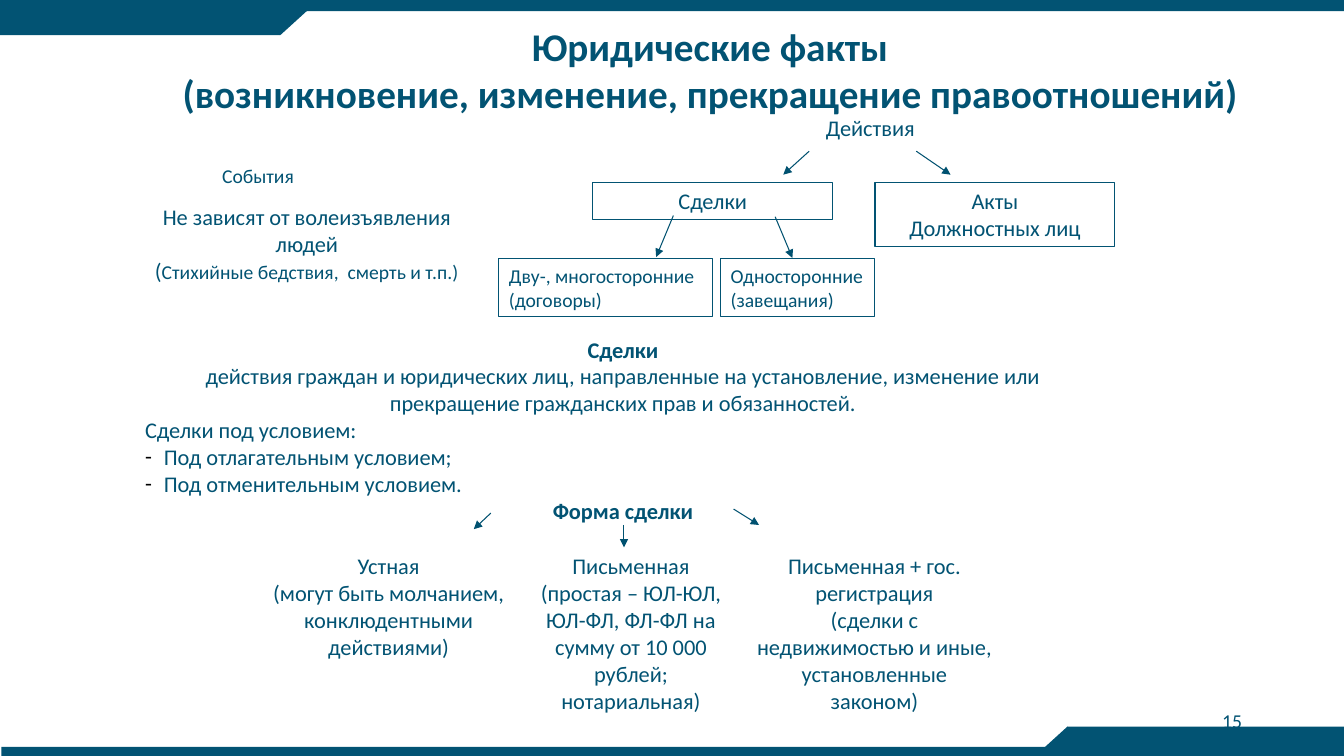
"""Build the slide on legal facts: events, actions, transactions and their forms."""
from lxml import etree
from pptx import Presentation
from pptx.dml import color
from pptx.enum import shapes, text
from pptx.oxml import ns
from pptx import util as u

BLUE, LINE = "025373", "005170"
LEFT, CENTER, RIGHT = text.PP_ALIGN.LEFT, text.PP_ALIGN.CENTER, text.PP_ALIGN.RIGHT
TOP, MIDDLE = text.MSO_ANCHOR.TOP, text.MSO_ANCHOR.MIDDLE


def paint(fill, value):
    fill.solid()
    fill.fore_color.rgb = color.RGBColor.from_string(value)


def write(box, lines, size=16, align=CENTER, anchor=TOP, bold=False):
    frame = box.text_frame
    layout = {"word_wrap": True, "vertical_anchor": anchor,
              "margin_left": u.Pt(7.2), "margin_right": u.Pt(7.2),
              "margin_top": u.Pt(3.6), "margin_bottom": u.Pt(3.6)}
    for name, value in layout.items():
        setattr(frame, name, value)
    for index, line in enumerate(lines):
        para = frame.paragraphs[0] if index == 0 else frame.add_paragraph()
        para.alignment = align
        for words, changes in [(line, {})] if isinstance(line, str) else line:
            span = para.add_run()
            span.text = words
            look = {"name": "Calibri", "size": u.Pt(size), "bold": bold, **changes}
            for name, value in look.items():
                setattr(span.font, name, value)
            paint(span.font.fill, BLUE)
    return frame.paragraphs


deck = Presentation()
deck.slide_width, deck.slide_height = u.Pt(960), u.Pt(540)
page = deck.slides.add_slide(deck.slide_layouts[6])

RECT, MERGE = shapes.MSO_SHAPE.RECTANGLE, shapes.MSO_SHAPE.FLOWCHART_MERGE
bands = [
    (RECT, 0, 0, 960, 8, 0),
    (RECT, 1, 533.5, 959, 6.5, 0),
    (RECT, 0, 3.6, 200, 21.6, 0),
    (MERGE, 176.4, 3.6, 47.5, 21.6, 0),
    (RECT, 762.5, 519, 197.5, 21, 0),
    (MERGE, 738.7, 519, 47.5, 21.6, 180),
]
for kind, left, top, width, height, turn in bands:
    band = page.shapes.add_shape(kind, *map(u.Pt, (left, top, width, height)))
    band.shadow.inherit = False
    band.rotation = turn
    paint(band.fill, BLUE)
    band.line.fill.background()

small = {"size": u.Pt(14)}
labels = [
    ((79, 12.2, 856, 80), ["Юридические факты", "(возникновение, изменение, прекращение правоотношений)"],
     {"size": 28, "bold": True}),
    ((151.5, 113.5, 90, 25), ["События"], {"size": 14, "align": LEFT}),
    ((90.7, 141.8, 257, 65.5), ["Не зависят от волеизъявления людей",
                              [("(", {}), ("Стихийные бедствия,  смерть и т.п.)", small)]], {}),
    ((565.2, 79.9, 113, 22.3), ["Действия"], {"anchor": MIDDLE}),
    ((185.8, 391, 183.6, 106.6), ["Устная", "(могут быть молчанием, конклюдентными действиями)"], {}),
    ((367.2, 391, 167, 145.4), ["Письменная", "(простая – ЮЛ-ЮЛ, ЮЛ-ФЛ, ФЛ-ФЛ на сумму от 10 000 рублей; нотариальная)"], {}),
    ((532.8, 391, 183.6, 145.4), ["Письменная + гос. регистрация",
                                "(сделки с недвижимостью и иные, установленные законом)"], {}),
    ((661, 500.4, 233.3, 28.8), ["15"], {"size": 14, "align": RIGHT, "anchor": MIDDLE}),
]
for place, lines, style in labels:
    write(page.shapes.add_textbox(*map(u.Pt, place)), lines, **style)

frames = [
    ((423.4, 130.3, 171.4, 26.6), ["Сделки"], {}),
    ((625, 130.3, 171.4, 46), ["Акты", "Должностных лиц"], {}),
    ((356.4, 185, 152.6, 41), ["Дву-, многосторонние", "(договоры)"], {"size": 14, "align": LEFT}),
    ((514.8, 185, 110.2, 41), ["Односторонние", "(завещания)"], {"size": 14, "align": LEFT}),
]
for place, lines, style in frames:
    box = page.shapes.add_shape(RECT, *map(u.Pt, place))
    box.shadow.inherit = False
    box.fill.background()
    paint(box.line.fill, BLUE)
    box.line.width = u.Pt(0.75)
    write(box, lines, **style)

definition = page.shapes.add_textbox(*map(u.Pt, (96.5, 236.2, 697, 167)))
strong = {"bold": True}
paras = write(definition, [
    [("Сделки", strong)],
    "действия граждан и юридических лиц, направленные на установление, изменение или "
    "прекращение гражданских прав и обязанностей.",
    "Сделки под условием:",
    "Под отлагательным условием;",
    "Под отменительным условием.",
    [("Форма сделки", strong)],
])
for para in paras[2:5]:
    para.alignment = LEFT
for para in paras[3:5]:
    props = para._p.get_or_add_pPr()
    props.set("marL", str(u.Pt(13.5)))
    props.set("indent", str(u.Pt(-13.5)))
    tint = etree.SubElement(props, ns.qn("a:buClr"))
    etree.SubElement(tint, ns.qn("a:srgbClr"), val="000000")
    etree.SubElement(props, ns.qn("a:buFont"), typeface="Calibri")
    etree.SubElement(props, ns.qn("a:buChar"), char="-")

arrows = [
    (578, 108, 559.5, 124.8), (654.5, 108, 679, 124.8),
    (481, 154, 468.7, 183.6), (553.7, 154.8, 566, 184.3),
    (350.6, 366.5, 338.4, 378), (445.7, 375, 445.7, 391), (524, 363.6, 542.2, 375),
]
for ends in arrows:
    arrow = page.shapes.add_connector(shapes.MSO_CONNECTOR.STRAIGHT, *map(u.Pt, ends))
    paint(arrow.line.fill, LINE)
    arrow.line.width = u.Pt(0.75)
    etree.SubElement(arrow.line._get_or_add_ln(), ns.qn("a:tailEnd"), type="triangle")
    etree.SubElement(arrow._element.spPr, ns.qn("a:effectLst"))

deck.save("out.pptx")
